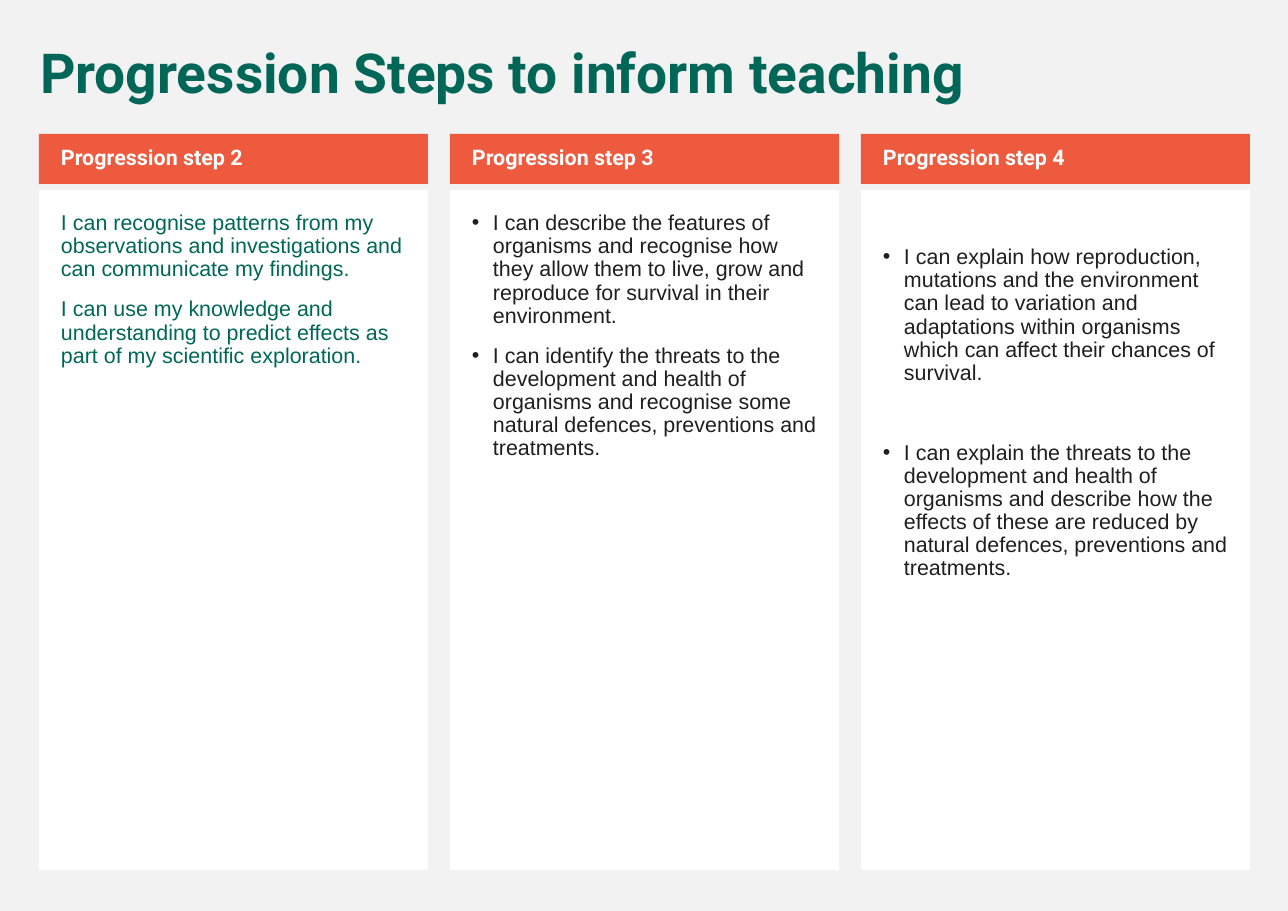
from lxml import etree
from pptx import Presentation
from pptx.dml.color import RGBColor
from pptx.enum.shapes import MSO_SHAPE
from pptx.enum.text import MSO_ANCHOR, MSO_AUTO_SIZE, PP_ALIGN
from pptx.oxml.ns import qn
from pptx.util import Emu, Pt

TITLE = "Progression Steps to inform teaching"
# extra_top is in px; gap is the space between paragraphs in points
STEPS = [
    dict(heading="Progression step 2", color="green", bullets=False, extra_top=0, gap=11,
         statements=[
             "I can recognise patterns from my observations and investigations and "
             "can communicate my findings.",
             "I can use my knowledge and understanding to predict effects as part "
             "of my scientific exploration."]),
    dict(heading="Progression step 3", color="ink", bullets=True, extra_top=0, gap=11,
         statements=[
             "I can describe the features of organisms and recognise how they allow "
             "them to live, grow and reproduce for survival in their environment.",
             "I can identify the threats to the development and health of organisms "
             "and recognise some natural defences, preventions and treatments."]),
    dict(heading="Progression step 4", color="ink", bullets=True, extra_top=34, gap=37,
         statements=[
             "I can explain how reproduction, mutations and the environment can lead "
             "to variation and adaptations within organisms which can affect their "
             "chances of survival.",
             "I can explain the threats to the development and health of organisms "
             "and describe how the effects of these are reduced by natural defences, "
             "preventions and treatments."]),
]
COLORS = {"page": "F2F2F2", "panel": "FFFFFF", "orange": "ED5A3E",
          "green": "006758", "ink": "1F1F1F", "white": "FFFFFF"}

SLIDE_W, SLIDE_H = 1288, 911
LEFT, RIGHT, COLUMN_W = 39, 1250, 389
HEADING_TOP, HEADING_H = 134, 50
PANEL_TOP, PANEL_H = 190, 680
INSET, INDENT = 22, 21


def px(length):
    return Emu(round(length * 914400 / 110.2))


def rgb(name):
    return RGBColor.from_string(COLORS[name])


def add_bullet(paragraph):
    """Give the paragraph a hanging bullet."""
    properties = paragraph._p.get_or_add_pPr()
    properties.set("marL", str(px(INDENT)))
    properties.set("indent", str(-px(INDENT)))
    etree.SubElement(properties, qn("a:buFont")).set("typeface", "Arial")
    etree.SubElement(properties, qn("a:buChar")).set("char", "•")


def write(shape, texts, *, font, size, color, bold=False, bullets=False, gap=11,
          anchor=MSO_ANCHOR.TOP, insets=(11, 6, 11, 6)):
    """Fill the shape with one paragraph per text; insets are left, top, right, bottom."""
    frame = shape.text_frame
    frame.word_wrap = True
    frame.auto_size = MSO_AUTO_SIZE.NONE
    frame.vertical_anchor = anchor
    (frame.margin_left, frame.margin_top,
     frame.margin_right, frame.margin_bottom) = map(px, insets)
    for index, text in enumerate(texts):
        paragraph = frame.add_paragraph() if index else frame.paragraphs[0]
        paragraph.alignment = PP_ALIGN.LEFT
        paragraph.line_spacing = 0.9
        paragraph.space_before = Pt(gap if index else 0)
        if bullets:
            add_bullet(paragraph)
        run = paragraph.add_run()
        run.text = text
        run.font.name, run.font.size, run.font.bold = font, Pt(size), bold
        run.font.color.rgb = rgb(color)


def add_block(slide, left, top, height, fill):
    block = slide.shapes.add_shape(MSO_SHAPE.RECTANGLE, px(left), px(top),
                                   px(COLUMN_W), px(height))
    block.shadow.inherit = False
    block.fill.solid()
    block.fill.fore_color.rgb = rgb(fill)
    block.line.fill.background()
    return block


def main():
    deck = Presentation()
    deck.slide_width, deck.slide_height = px(SLIDE_W), px(SLIDE_H)
    slide = deck.slides.add_slide(deck.slide_layouts[5])
    slide.background.fill.solid()
    slide.background.fill.fore_color.rgb = rgb("page")

    title = slide.shapes.title
    title.left, title.top, title.width, title.height = map(px, (29, 40, 1221, 72))
    write(title, [TITLE], font="Roboto", size=36, color="green", bold=True)

    pitch = (RIGHT - LEFT - COLUMN_W) / (len(STEPS) - 1)
    for column, step in enumerate(STEPS):
        left = LEFT + column * pitch
        panel = add_block(slide, left, PANEL_TOP, PANEL_H, "panel")
        write(panel, step["statements"], font="Arial", size=14, color=step["color"],
              bullets=step["bullets"], gap=step["gap"],
              insets=(INSET, INSET + step["extra_top"], INSET, INSET))
        heading = add_block(slide, left, HEADING_TOP, HEADING_H, "orange")
        write(heading, [step["heading"]], font="Roboto", size=14, color="white",
              bold=True, anchor=MSO_ANCHOR.MIDDLE, insets=(INSET, 6, 11, 6))

    deck.save("out.pptx")


if __name__ == "__main__":
    main()
